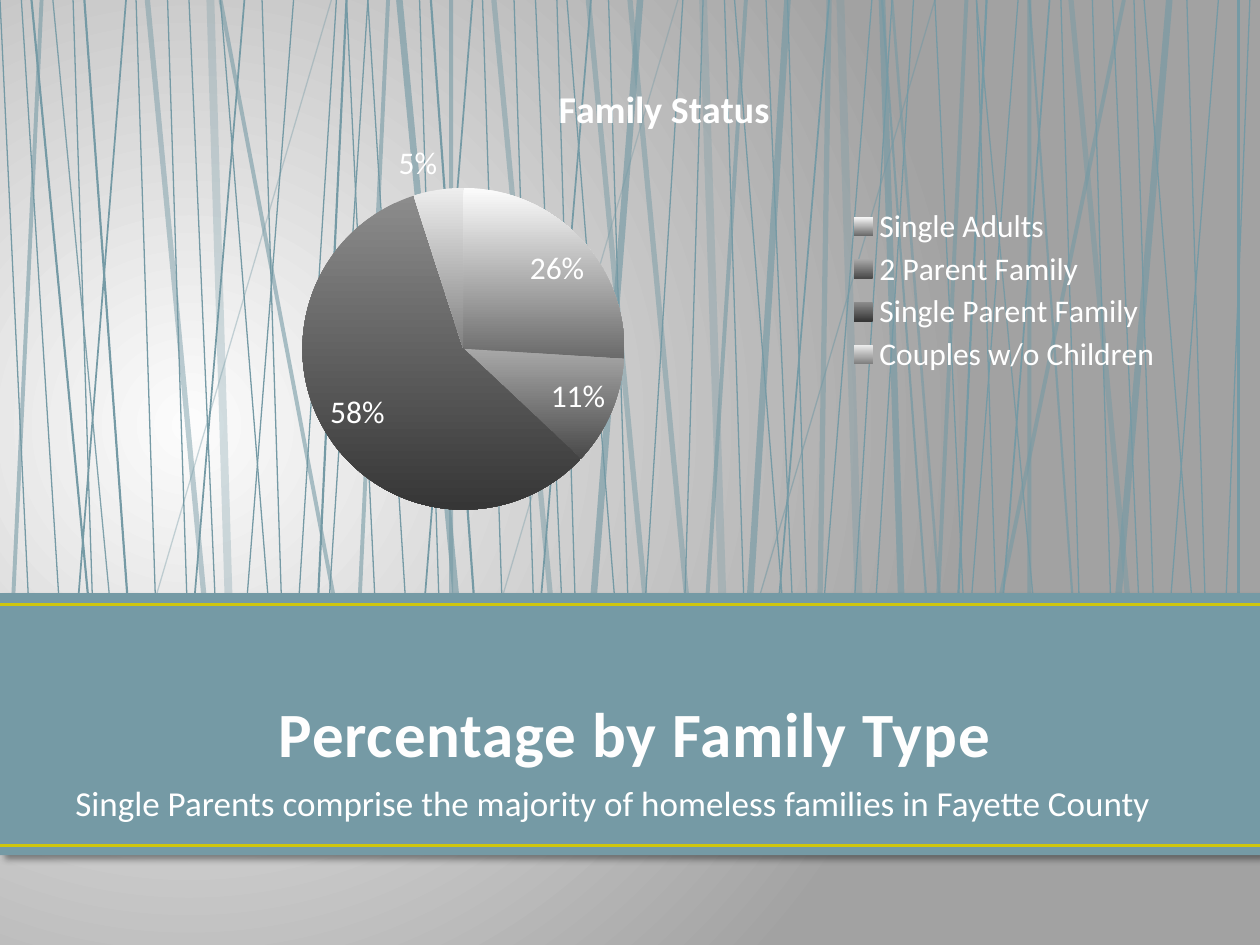
from lxml.etree import SubElement
from pptx import Presentation
from pptx.chart.data import CategoryChartData
from pptx.dml.color import RGBColor
from pptx.enum.chart import XL_CHART_TYPE, XL_LABEL_POSITION, XL_LEGEND_POSITION
from pptx.enum.shapes import MSO_CONNECTOR, MSO_SHAPE
from pptx.enum.text import MSO_ANCHOR, PP_ALIGN
from pptx.oxml import parse_xml
from pptx.oxml.ns import nsdecls, qn
from pptx.util import Cm, Pt

WIDTH, HEIGHT = 25.4, 19.05
TEAL, LIME, WHITE = "759AA5", "CFC60D", "FFFFFF"
FONT = "Calibri"

# (line width in pt, opacity in %): top and bottom x in % of the slide width
STRANDS = {
    (0.75, 100): [
        (20.8, 22.5), (17.5, 21.7), (23.3, 19.2), (0, 2.5), (1.7, 5), (5.8, 7.5),
        (26.7, 23.4), (29.2, 25.8), (15, 17.3), (10.8, 12.5), (13.3, 15), (48.3, 50),
        (45, 49.2), (27.5, 30), (29.2, 32.5), (44.2, 45.8), (33.3, 35), (54.2, 50.9),
        (55.8, 54.2), (42.5, 44.8), (38.3, 40), (40.8, 42.5), (58.3, 62.5), (69.2, 65),
        (62.5, 64.2), (72.5, 69.2), (70.8, 67.5), (60.8, 63.1), (57.5, 59.2),
        (74.2, 76.7), (77.5, 79.2), (84.2, 85.8), (86.7, 88.3), (94.2, 95.8),
        (90.8, 95), (96.7, 92.5), (90, 91.7), (99.2, 97.1), (88.3, 90.6), (80.8, 76.7)],
    (0.75, 90): [(4.2, 9.2), (77.5, 82.5)],
    (0.75, 56): [(74.2, 58.7)],
    (0.75, 39): [(26.3, 10.8), (53.8, 38.3)],
    (1, 100): [(10, 5.8), (19.4, 15), (37.5, 33.3), (46.9, 42.5), (65.8, 61.4), (83.3, 79.2)],
    (1.25, 100): [(2.5, 7.5), (6.7, 10.5), (27.5, 25), (34.2, 38), (78.3, 75.8), (98.3, 98.3)],
    (1.25, 72): [(81.7, 85.5), (70, 73.9)],
    (1.5, 58): [(70.8, 75)],
    (2.25, 58): [
        (3.3, 0.8), (17.5, 27.5), (30.8, 28.3), (35.8, 35.8), (59.2, 55.8),
        (76.7, 74.2), (81.7, 81.7), (89.2, 78.3)],
    (3, 47): [(11.7, 16.7), (39.2, 44.2), (46.7, 51.7), (85, 90), (65.8, 65), (50, 55)],
    (3.75, 63): [(50.8, 46.7), (31.7, 36.7), (92.8, 88.3), (70, 71.7), (62.5, 59.2)],
    (4.5, 30): [(16.7, 18.3), (66.7, 68.3), (55.8, 57.5)],
}

# Family type, percentage, top and bottom shade of the slice
FAMILIES = [
    ("Single Adults", 26, "FCFCFC", "6A6A6A"),
    ("2 Parent Family", 11, "A8A8A8", "4A4A4A"),
    ("Single Parent Family", 58, "8C8C8C", "363636"),
    ("Couples w/o Children", 5, "EEEEEE", "808080"),
]


def rgb(color):
    return RGBColor.from_string(color)


def format_font(font, size, color=WHITE, bold=False):
    font.name = FONT
    font.size = Pt(size)
    font.bold = bold
    font.color.rgb = rgb(color)


def write_text(frame, text, size, color=WHITE, bold=False, align=PP_ALIGN.LEFT,
               anchor=MSO_ANCHOR.TOP, spacing=0):
    frame.word_wrap = True
    frame.vertical_anchor = anchor
    paragraph = frame.paragraphs[0]
    paragraph.alignment = align
    run = paragraph.add_run()
    run.text = text
    format_font(run.font, size, color, bold)
    if spacing:
        run.font._element.set("spc", str(int(spacing * 100)))


def shade(fill, start, end):
    """Fill with a gradient that runs straight down."""
    fill.gradient()
    fill.gradient_angle = 270
    for stop, color in zip(fill.gradient_stops, (start, end)):
        stop.color.rgb = rgb(color)


def paint_background(slide):
    fill = slide.background.fill
    shade(fill, "FCFCFC", "A2A2A2")
    linear = next(slide.background._cSld.iter(qn("a:lin")))
    linear.getparent().replace(linear, parse_xml(
        f'<a:path {nsdecls("a")} path="circle">'
        '<a:fillToRect l="15000" t="50000" r="85000" b="60000"/></a:path>'))


def add_line(slide, start, end, color, width, opacity=100):
    line = slide.shapes.add_connector(
        MSO_CONNECTOR.STRAIGHT, *(Cm(value) for value in (*start, *end)))
    line.line.color.rgb = rgb(color)
    line.line.width = Pt(width)
    properties = line._element.spPr
    if opacity < 100:
        tint = next(properties.iter(qn("a:srgbClr")))
        SubElement(tint, qn("a:alpha"), val=str(opacity * 1000))
    SubElement(properties, qn("a:effectLst"))


def add_strands(slide):
    for (width, opacity), strands in STRANDS.items():
        for top, bottom in strands:
            add_line(slide, (WIDTH * top / 100, 0), (WIDTH * bottom / 100, 13.39),
                     TEAL, width, opacity)


def add_band(slide):
    band = slide.shapes.add_shape(MSO_SHAPE.RECTANGLE, 0, Cm(11.96), Cm(WIDTH), Cm(5.28))
    band.fill.solid()
    band.fill.fore_color.rgb = rgb(TEAL)
    band.line.fill.background()
    band._element.spPr.append(parse_xml(
        f'<a:effectLst {nsdecls("a")}>'
        '<a:outerShdw blurRad="50800" dist="38100" dir="2700000" algn="tl" rotWithShape="0">'
        '<a:srgbClr val="000000"><a:alpha val="40000"/></a:srgbClr>'
        '</a:outerShdw></a:effectLst>'))
    for y in (12.19, 17.04):
        add_line(slide, (0, y), (WIDTH, y), LIME, 1.5)


def add_heading(slide):
    title = slide.shapes.title
    title.left, title.top, title.width, title.height = Cm(1.27), Cm(12.4), Cm(23.06), Cm(3.18)
    title.text_frame.margin_bottom = Cm(0.05)
    write_text(title.text_frame, "Percentage by Family Type", 36, color="FEFEFE", bold=True,
               align=PP_ALIGN.CENTER, anchor=MSO_ANCHOR.BOTTOM, spacing=0.5)
    slide.shapes._spTree.append(title._element)  # in front of the band

    finding = slide.shapes.add_textbox(Cm(1.27), Cm(15.62), Cm(23.06), Cm(1.14))
    write_text(finding.text_frame,
               "Single Parents comprise the majority of homeless families in Fayette County", 20)


def place(element, index, **fractions):
    """Give a chart part a manual layout, in fractions of the chart."""
    for layout in element.findall(qn("c:layout")):
        element.remove(layout)
    modes = ['<c:layoutTarget val="inner"/>'] if element.tag == qn("c:plotArea") else []
    modes += [f'<c:{key}Mode val="edge"/>' for key in "xy"]
    values = [f'<c:{key} val="{value}"/>' for key, value in fractions.items()]
    element.insert(index, parse_xml(
        f'<c:layout {nsdecls("c")}><c:manualLayout>{"".join(modes + values)}'
        '</c:manualLayout></c:layout>'))


def add_family_chart(slide):
    data = CategoryChartData()
    data.categories = [family[0] for family in FAMILIES]
    data.add_series("Family Status", [family[1] for family in FAMILIES])
    chart = slide.shapes.add_chart(XL_CHART_TYPE.PIE, Cm(2.74), Cm(0.84), Cm(20.96), Cm(9.83),
                                   data).chart
    format_font(chart.font, 18)

    chart.has_title = True
    heading = chart.chart_title.text_frame
    heading.text = "Family Status"
    format_font(heading.paragraphs[0].runs[0].font, 21.6, bold=True)
    place(chart.chart_title._element, 1, x=0.4, y=0.07)

    chart.has_legend = True
    chart.legend.position = XL_LEGEND_POSITION.RIGHT
    chart.legend.include_in_layout = False
    format_font(chart.legend.font, 18)
    place(chart.legend._element, 1, x=0.68, y=0.33, w=0.31, h=0.36)

    pie = chart.plots[0]
    pie.vary_by_categories = True
    for index, (_, _, top, bottom) in enumerate(FAMILIES):
        slice_format = pie.series[0].points[index].format
        shade(slice_format.fill, top, bottom)
        slice_format.line.fill.background()
    pie.has_data_labels = True
    labels = pie.data_labels
    labels.show_percentage = True
    labels.show_value = False
    labels.number_format = "0%"
    labels.number_format_is_linked = False
    labels.position = XL_LABEL_POSITION.BEST_FIT
    format_font(labels.font, 18)
    place(chart._chartSpace.chart.plotArea, 0, x=0.16, y=0.3, w=0.31, h=0.66)


def main():
    presentation = Presentation()
    presentation.slide_width, presentation.slide_height = Cm(WIDTH), Cm(HEIGHT)
    slide = presentation.slides.add_slide(presentation.slide_layouts[5])
    paint_background(slide)
    add_strands(slide)
    add_band(slide)
    add_heading(slide)
    add_family_chart(slide)
    presentation.save("out.pptx")


if __name__ == "__main__":
    main()
